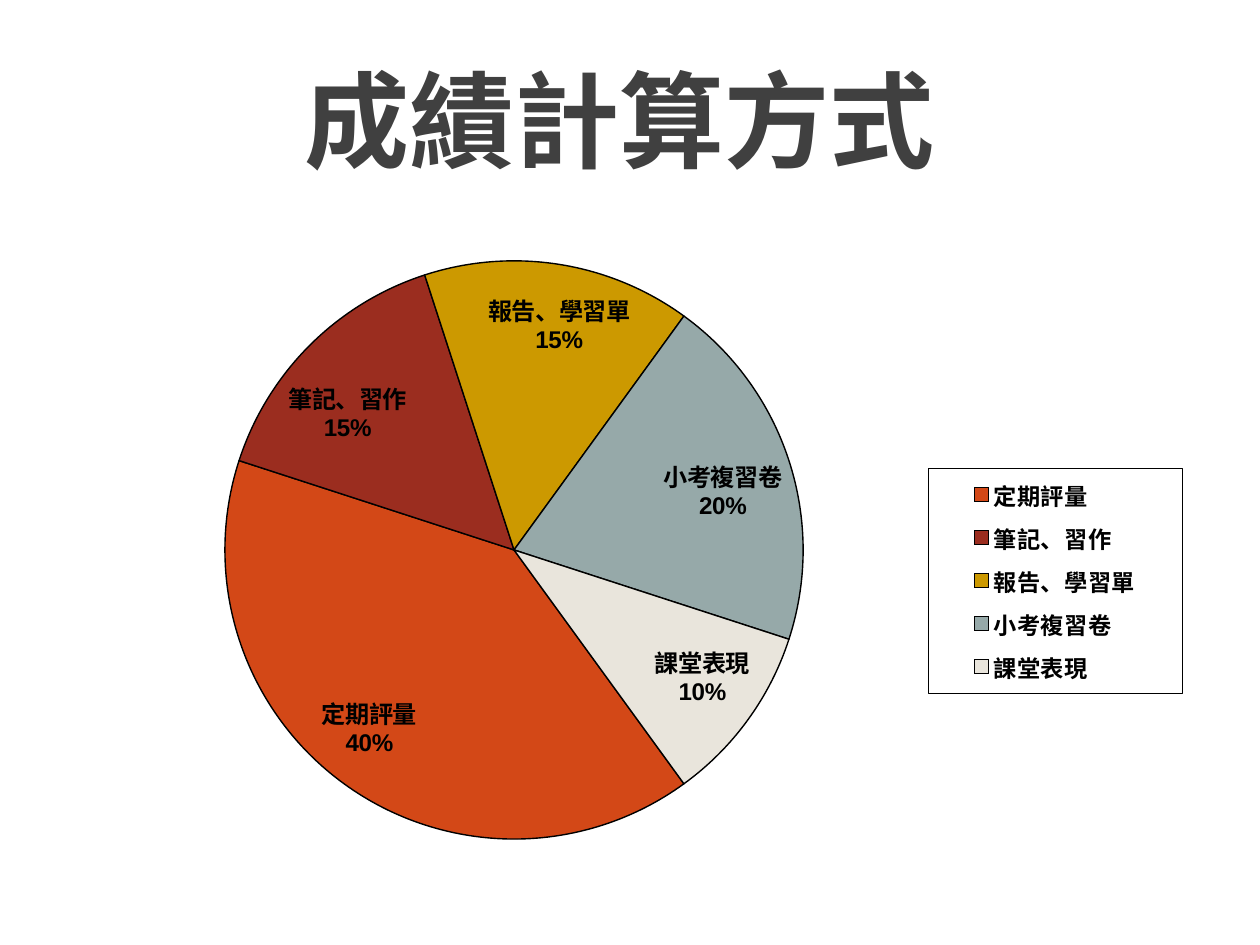
from copy import deepcopy
from dataclasses import dataclass

from lxml import etree
from pptx import Presentation
from pptx.chart.data import CategoryChartData
from pptx.dml.color import RGBColor
from pptx.enum.chart import XL_CHART_TYPE as ChartType
from pptx.enum.chart import XL_LABEL_POSITION as LabelPos
from pptx.enum.chart import XL_LEGEND_POSITION as LegendPos
from pptx.enum.text import MSO_ANCHOR, PP_ALIGN
from pptx.oxml.ns import qn
from pptx.util import Inches, Pt


@dataclass(frozen=True)
class Theme:
    title_font: str = "Karla"
    chart_font: str = "Arial"
    title_color: str = "404040"
    ink: str = "000000"
    title_size: float = 60
    chart_size: float = 14.4
    label_size: float = 13.8
    legend_size: float = 13.3
    slice_line: float = 0.8
    legend_line: float = 0.25


THEME = Theme()
# Category, share in percent, slice colour, label shift (right, down) in inches
GRADES = [
    ("定期評量", 40, "D34817", (-0.21, -0.17)),
    ("筆記、習作", 15, "9B2D1F", (-0.21, 0.24)),
    ("報告、學習單", 15, "CC9900", (0.57, 0.17)),
    ("小考複習卷", 20, "96A9A9", (0, -0.03)),
    ("課堂表現", 10, "E9E5DC", (0.06, -0.08)),
]
FIRST_SLICE_ANGLE = 144
# Left, top, width, height within the chart
PIE_BOX = [Inches(n) for n in (1.78, 0.65, 4.6, 4.59)]
LEGEND_BOX = [Inches(n) for n in (7.37, 2.3, 2.01, 1.78)]


def set_font(font, name, size, color):
    font.name = name
    font.size = Pt(size)
    font.bold = True
    font.color.rgb = RGBColor.from_string(color)


def make_layout(chart_size, lengths, **modes):
    """Return a manual layout; lengths become fractions of the chart's size."""
    layout = etree.Element(qn("c:layout"))
    manual = etree.SubElement(layout, qn("c:manualLayout"))
    fractions = [round(n / chart_size[i % 2], 4) for i, n in enumerate(lengths)]
    for tag, value in (modes | dict(zip("xywh", fractions))).items():
        etree.SubElement(manual, qn(f"c:{tag}")).set("val", str(value))
    return layout


def add_title(s, text, left, top, width, height):
    tf = s.shapes.add_textbox(left, top, width, height).text_frame
    tf.word_wrap = True
    tf.vertical_anchor = MSO_ANCHOR.BOTTOM
    tf.margin_bottom = Inches(0.1)
    p = tf.paragraphs[0]
    p.text = text
    p.alignment = PP_ALIGN.CENTER
    set_font(p.font, THEME.title_font, THEME.title_size, THEME.title_color)


def style_slices(series):
    for i, (_, _, color, _) in enumerate(GRADES):
        fmt = series.points[i].format
        fmt.fill.solid()
        fmt.fill.fore_color.rgb = RGBColor.from_string(color)
        fmt.line.color.rgb = RGBColor.from_string(THEME.ink)
        fmt.line.width = Pt(THEME.slice_line)


def style_labels(labels, chart_size):
    labels.show_category_name = True
    labels.show_percentage = True
    labels.show_value = False
    labels.number_format = "0%"
    labels.number_format_is_linked = False
    labels.position = LabelPos.INSIDE_END
    set_font(labels.font, THEME.chart_font, THEME.label_size, THEME.ink)
    element = labels._element
    separator = etree.Element(qn("c:separator"))
    separator.text = "\n"
    element.find(qn("c:showBubbleSize")).addnext(separator)

    # Each label takes the shared settings and its own shift
    shared = [e for e in element if e.tag != qn("c:showLeaderLines")]
    for i, (_, _, _, shift) in enumerate(GRADES):
        label = etree.Element(qn("c:dLbl"))
        etree.SubElement(label, qn("c:idx")).set("val", str(i))
        lengths = [Inches(n) for n in shift]
        label.append(make_layout(chart_size, lengths))
        label.extend([deepcopy(e) for e in shared])
        element.insert(i, label)


def style_legend(legend, chart_size):
    legend.position = LegendPos.RIGHT
    legend.include_in_layout = False
    set_font(legend.font, THEME.chart_font, THEME.legend_size, THEME.ink)
    element = legend._element
    layout = make_layout(chart_size, LEGEND_BOX, xMode="edge", yMode="edge")
    element.find(qn("c:legendPos")).addnext(layout)
    # A legend has no public line format, so its frame is written as XML
    frame = etree.Element(qn("c:spPr"))
    line = etree.SubElement(frame, qn("a:ln"), w=str(Pt(THEME.legend_line)))
    fill = etree.SubElement(line, qn("a:solidFill"))
    etree.SubElement(fill, qn("a:srgbClr"), val=THEME.ink)
    element.find(qn("c:txPr")).addprevious(frame)


def add_grade_pie(s, left, top, width, height):
    data = CategoryChartData()
    data.categories = [grade[0] for grade in GRADES]
    data.add_series("Series 1", [grade[1] for grade in GRADES])
    chart = s.shapes.add_chart(ChartType.PIE, left, top, width, height, data).chart
    chart.has_title = False
    chart.has_legend = True
    set_font(chart.font, THEME.chart_font, THEME.chart_size, THEME.ink)

    chart_size = (width, height)
    plot = chart.plots[0]
    plot.vary_by_categories = True
    series = plot.series[0]
    style_slices(series)
    style_labels(series.data_labels, chart_size)
    style_legend(chart.legend, chart_size)

    pie = plot._element
    angle = pie.find(qn("c:firstSliceAng"))
    if angle is None:
        angle = etree.SubElement(pie, qn("c:firstSliceAng"))
    angle.set("val", str(FIRST_SLICE_ANGLE))

    area = pie.getparent()
    for old in area.findall(qn("c:layout")):
        area.remove(old)
    layout = make_layout(
        chart_size, PIE_BOX, layoutTarget="inner", xMode="edge", yMode="edge"
    )
    area.insert(0, layout)


def main():
    prs = Presentation()
    prs.slide_width, prs.slide_height = Inches(10), Inches(7.5)
    s = prs.slides.add_slide(prs.slide_layouts[6])
    add_title(s, "成績計算方式", Inches(0.67), Inches(0.29), Inches(8.5), Inches(1.25))
    add_grade_pie(s, Inches(0), Inches(1.42), Inches(10), Inches(6.35))
    prs.save("out.pptx")


if __name__ == "__main__":
    main()
